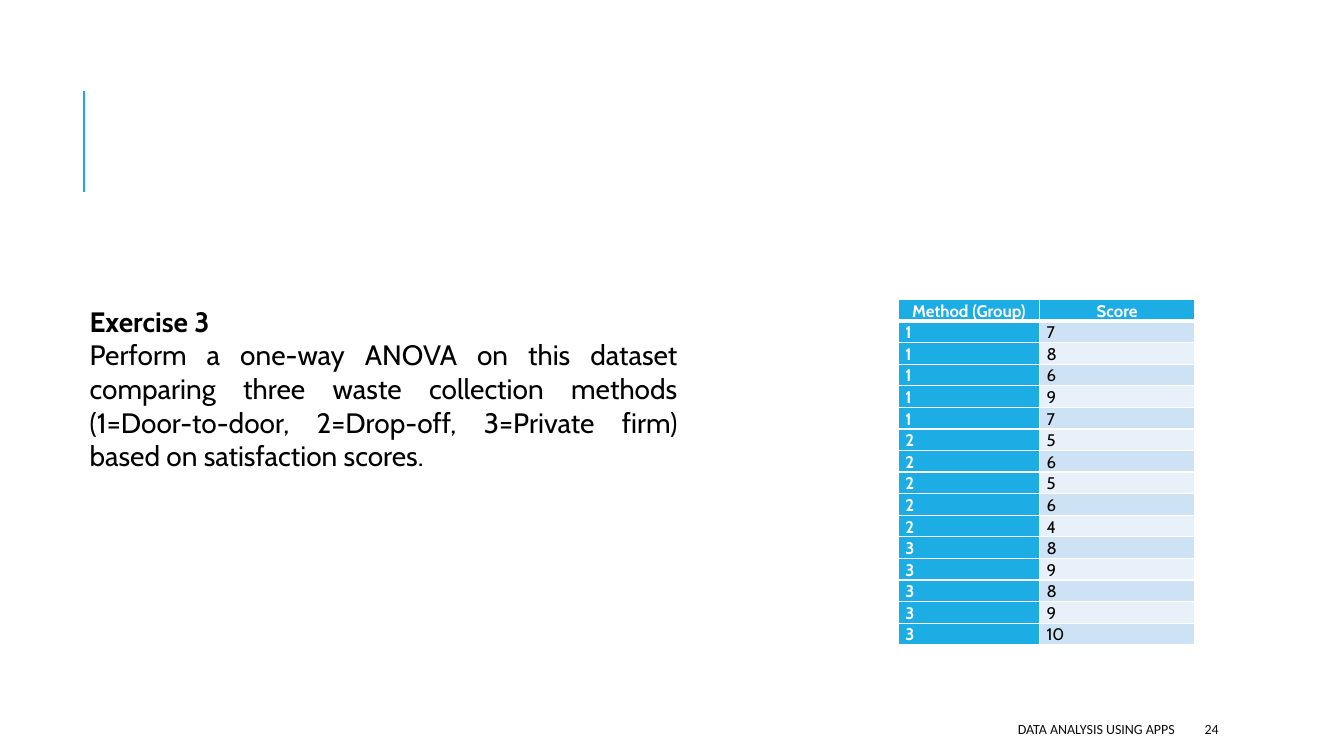
from lxml.etree import SubElement
from pptx import Presentation
from pptx.dml.color import RGBColor
from pptx.enum.shapes import MSO_CONNECTOR
from pptx.enum.text import MSO_ANCHOR, PP_ALIGN
from pptx.oxml.ns import qn
from pptx.util import Emu, Pt

BLUE = RGBColor(0x1C, 0xAD, 0xE4)
BAND_DARK = RGBColor(0xCD, 0xE3, 0xF5)
BAND_LIGHT = RGBColor(0xE8, 0xF1, 0xFA)
WHITE = RGBColor(0xFF, 0xFF, 0xFF)
BLACK = RGBColor(0x00, 0x00, 0x00)
FOOTER_GREY = RGBColor(0x0D, 0x0D, 0x0D)

SCORES = {
    "1": [7, 8, 6, 9, 7],
    "2": [5, 6, 5, 6, 4],
    "3": [8, 9, 8, 9, 10],
}


def px(n):
    """100 px to the inch."""
    return Emu(n * 9144)


def add_run(p, text, size, font, color, bold=False):
    r = p.add_run()
    r.text = text
    r.font.size = Pt(size)
    r.font.name = font
    r.font.bold = bold
    r.font.color.rgb = color


def add_text(s, x, y, w, h, anchor=MSO_ANCHOR.TOP):
    tf = s.shapes.add_textbox(px(x), px(y), px(w), px(h)).text_frame
    tf.word_wrap = True
    tf.vertical_anchor = anchor
    return tf


def add_footer(s, x, w, text, align):
    p = add_text(s, x, 708, w, 30, MSO_ANCHOR.MIDDLE).paragraphs[0]
    p.alignment = align
    add_run(p, text, 10, "Calibri", FOOTER_GREY)


def add_accent_line(s, x, y1, y2):
    line = s.shapes.add_connector(MSO_CONNECTOR.STRAIGHT, px(x), px(y1), px(x), px(y2))
    line.line.color.rgb = BLUE
    line.line.width = Pt(1.5)
    SubElement(line._element.spPr, qn("a:effectLst"))


def set_borders(cell, top, bottom):
    tcPr = cell._tc.get_or_add_tcPr()
    for side, width in (("L", 1), ("R", 1), ("T", top), ("B", bottom)):
        ln = SubElement(tcPr, qn(f"a:ln{side}"), w=str(Pt(width)))
        fill = SubElement(ln, qn("a:solidFill"))
        SubElement(fill, qn("a:srgbClr"), val=str(WHITE))


def fill_cell(cell, text, row, col):
    header = row == 0
    strong = header or col == 0
    set_borders(cell, top=3 if row == 1 else 1, bottom=3 if header else 1)
    cell.fill.solid()
    band = BAND_DARK if row % 2 else BAND_LIGHT
    cell.fill.fore_color.rgb = BLUE if strong else band
    cell.margin_left = cell.margin_right = px(7)
    cell.margin_top = cell.margin_bottom = 0
    p = cell.text_frame.paragraphs[0]
    p.alignment = PP_ALIGN.CENTER if header else PP_ALIGN.LEFT
    p.line_spacing = 1.07
    add_run(p, text, 12, "Cabin", WHITE if strong else BLACK, strong)


def add_score_table(s, x, y, col_widths, row_height):
    rows = [("Method (Group)", "Score")]
    rows += [(group, str(n)) for group, scores in SCORES.items() for n in scores]
    table = s.shapes.add_table(len(rows), len(col_widths), px(x), px(y),
                               px(sum(col_widths)), px(row_height * len(rows))).table
    for column, width in zip(table.columns, col_widths):
        column.width = px(width)
    for i, values in enumerate(rows):
        table.rows[i].height = px(row_height)
        for j, text in enumerate(values):
            fill_cell(table.cell(i, j), text, i, j)


def add_exercise(s):
    tf = add_text(s, 79, 297, 603, 212)
    add_run(tf.paragraphs[0], "Exercise 3", 20, "Cabin", BLACK, bold=True)
    p = tf.add_paragraph()
    p.alignment = PP_ALIGN.JUSTIFY
    add_run(p, "Perform a one-way ANOVA on this dataset comparing three waste "
               "collection methods (1=Door-to-door, 2=Drop-off, 3=Private firm) "
               "based on satisfaction scores.", 20, "Cabin", BLACK)


def main():
    prs = Presentation()
    prs.slide_width, prs.slide_height = px(1333), px(750)
    s = prs.slides.add_slide(prs.slide_layouts[6])

    # Accent line and footer
    add_accent_line(s, 83, 190, 90)
    add_footer(s, 530, 645, "DATA ANALYSIS USING APPS", PP_ALIGN.RIGHT)
    add_footer(s, 1185, 106, "24", PP_ALIGN.LEFT)

    # Data and task
    add_score_table(s, 891, 297, (140, 154), 21)
    add_exercise(s)

    prs.save("out.pptx")


if __name__ == "__main__":
    main()
